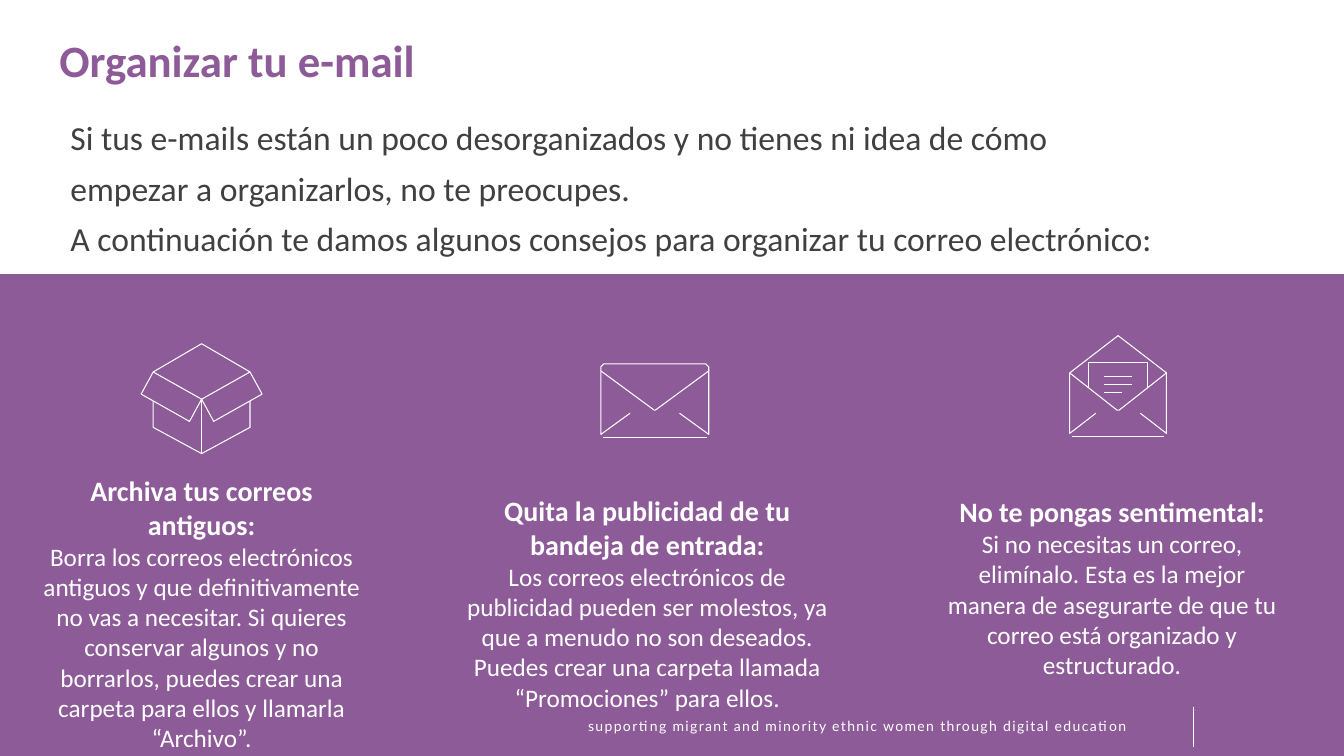
from lxml import etree
from pptx import Presentation
from pptx.dml.color import RGBColor
from pptx.enum.shapes import MSO_CONNECTOR, MSO_SHAPE
from pptx.enum.text import MSO_AUTO_SIZE, PP_ALIGN
from pptx.oxml.ns import qn
from pptx.util import Inches, Pt

STRAIGHT = MSO_CONNECTOR.STRAIGHT
RECTANGLE = MSO_SHAPE.RECTANGLE
CENTER, LEFT = PP_ALIGN.CENTER, PP_ALIGN.LEFT
GROW, FIXED = MSO_AUTO_SIZE.SHAPE_TO_FIT_TEXT, MSO_AUTO_SIZE.NONE

PURPLE, WHITE, GREY = "8D5B98", "FFFFFF", "404040"
PAGE_WIDTH, PAGE_HEIGHT = 13.33, 7.5

# Icon strokes in inches from the icon's top left corner: (points, closed)
BOX_ICON = [
    ([(0.12, 0.57), (0.12, 0.83), (0.6, 1.09), (1.08, 0.83), (1.08, 0.57)], False),
    ([(1.08, 0.28), (0.6, 0), (0.12, 0.28)], False),
    ([(0.48, 0.77), (0, 0.5), (0.12, 0.28), (0.6, 0.55)], True),
    ([(0.72, 0.77), (1.2, 0.5), (1.08, 0.28), (0.6, 0.55)], True),
    ([(0.6, 0.55), (0.6, 1.09)], False),
]
ENVELOPE_ICON = [
    ([(1.07, 0.07), (1.07, 0.03), (1.04, 0), (0.03, 0), (0, 0.03), (0, 0.07)], False),
    ([(0.78, 0.49), (1.07, 0.7), (1.07, 0.07), (0.54, 0.46), (0.53, 0.46),
      (0, 0.07), (0, 0.7), (0.29, 0.49)], False),
    ([(0.02, 0.73), (1.05, 0.73)], False),
]
LETTER_ICON = [
    ([(0.7, 0.77), (0.96, 0.97), (0.96, 0.37), (0.48, 0), (0, 0.37),
      (0, 0.97), (0.26, 0.77)], False),
    ([(0.02, 1), (0.94, 1)], False),
    ([(0.96, 0.37), (0.49, 0.74), (0.47, 0.74), (0, 0.37)], False),
    ([(0.19, 0.52), (0.19, 0.27), (0.77, 0.27), (0.77, 0.52)], False),
    ([(0.34, 0.41), (0.62, 0.41)], False),
    ([(0.34, 0.48), (0.62, 0.48)], False),
    ([(0.34, 0.56), (0.52, 0.56)], False),
]

# Each tip: icon strokes, icon corner, text box, heading, advice
TIPS = [
    (ENVELOPE_ICON, (5.96, 3.61), (4.5, 4.85, 3.84, 2.29),
     "Quita la publicidad de tu bandeja de entrada:",
     "Los correos electrónicos de publicidad pueden ser molestos, ya que a menudo "
     "no son deseados. Puedes crear una carpeta llamada “Promociones” para ellos."),
    (BOX_ICON, (1.4, 3.41), (0.27, 4.65, 3.46, 2.89),
     "Archiva tus correos antiguos:",
     "Borra los correos electrónicos antiguos y que definitivamente no vas a "
     "necesitar. Si quieres conservar algunos y no borrarlos, puedes crear una "
     "carpeta para ellos y llamarla “Archivo”."),
    (LETTER_ICON, (10.61, 3.33), (9.3, 4.86, 3.46, 1.95),
     "No te pongas sentimental:",
     "Si no necesitas un correo, elimínalo. Esta es la mejor manera de asegurarte "
     "de que tu correo está organizado y estructurado."),
]


def color(value):
    return RGBColor.from_string(value)


def inches(*values):
    return [Inches(value) for value in values]


def add_band(page, box):
    band = page.shapes.add_shape(RECTANGLE, *inches(*box))
    band.shadow.inherit = False
    band.fill.solid()
    band.fill.fore_color.rgb = color(PURPLE)
    band.line.fill.background()


def add_line(shapes, start, end, width):
    line = shapes.add_connector(STRAIGHT, *inches(*start, *end))
    line.line.color.rgb = color(WHITE)
    line.line.width = Pt(width)
    etree.SubElement(line._element.spPr, qn("a:effectLst"))


def add_text(page, box, lines, align=LEFT, auto_size=FIXED, font="Calibri", gap=0, spacing=1.0):
    """Write lines of (text, size, colour, bold), one paragraph each; return the frame."""
    frame = page.shapes.add_textbox(*inches(*box)).text_frame
    frame.word_wrap = True
    frame.auto_size = auto_size
    for index, (text, size, text_color, bold) in enumerate(lines):
        para = frame.add_paragraph() if index else frame.paragraphs[0]
        para.alignment = align
        para.line_spacing = spacing
        if index:
            para.space_before = Pt(gap)
        span = para.add_run()
        span.text = text
        span.font.name = font
        span.font.size = Pt(size)
        span.font.bold = bold
        span.font.color.rgb = color(text_color)
    return frame


def add_icon(page, corner, strokes):
    """Draw the strokes as one group, offset from the given corner."""
    group = page.shapes.add_group_shape()
    for offsets, closed in strokes:
        points = [(corner[0] + x, corner[1] + y) for x, y in offsets]
        if len(points) == 2:
            add_line(group.shapes, *points, 0.75)
            continue
        start, *rest = [tuple(inches(*point)) for point in points]
        builder = group.shapes.build_freeform(*start)
        builder.add_line_segments(rest, close=closed)
        outline = builder.convert_to_shape()
        outline.shadow.inherit = False
        outline.fill.background()
        outline.line.color.rgb = color(WHITE)
        outline.line.width = Pt(0.75)


def add_footer(page, top):
    add_band(page, (0, top, PAGE_WIDTH, PAGE_HEIGHT - top))
    add_line(page.shapes, (11.84, top + 0.47), (11.84, top + 0.07), 1)
    motto = "supporting migrant and minority ethnic women through digital education"
    frame = add_text(page, (5.6, top + 0.13, 5.81, 0.27), [(motto, 10, WHITE, False)],
                     CENTER, GROW, "Lato")
    frame.paragraphs[0].runs[0]._r.get_or_add_rPr().set("spc", "100")


def add_introduction(page, left, top):
    add_text(page, (left + 0.11, top + 0.82, 12.14, 1.59), [
        (text, 24, GREY, False) for text in (
            "Si tus e-mails están un poco desorganizados y no tienes ni idea de cómo",
            "empezar a organizarlos, no te preocupes.",
            "A continuación te damos algunos consejos para organizar tu correo electrónico:",
        )], gap=10, spacing=0.9)
    add_text(page, (left, top, 12.14, 0.91),
             [("Organizar tu e-mail", 32, PURPLE, True)], spacing=0.9)


def add_tip(page, strokes, corner, box, heading, advice):
    add_icon(page, corner, strokes)
    add_text(page, box, [(heading, 20, WHITE, True), (advice, 18, WHITE, False)], CENTER, GROW)


def main():
    deck = Presentation()
    deck.slide_width, deck.slide_height = inches(PAGE_WIDTH, PAGE_HEIGHT)
    page = deck.slides.add_slide(deck.slide_layouts[6])
    add_footer(page, 6.94)
    add_band(page, (0, 2.72, PAGE_WIDTH, 4.24))
    add_introduction(page, 0.49, 0.34)
    for tip in TIPS:
        add_tip(page, *tip)
    deck.save("out.pptx")


if __name__ == "__main__":
    main()
